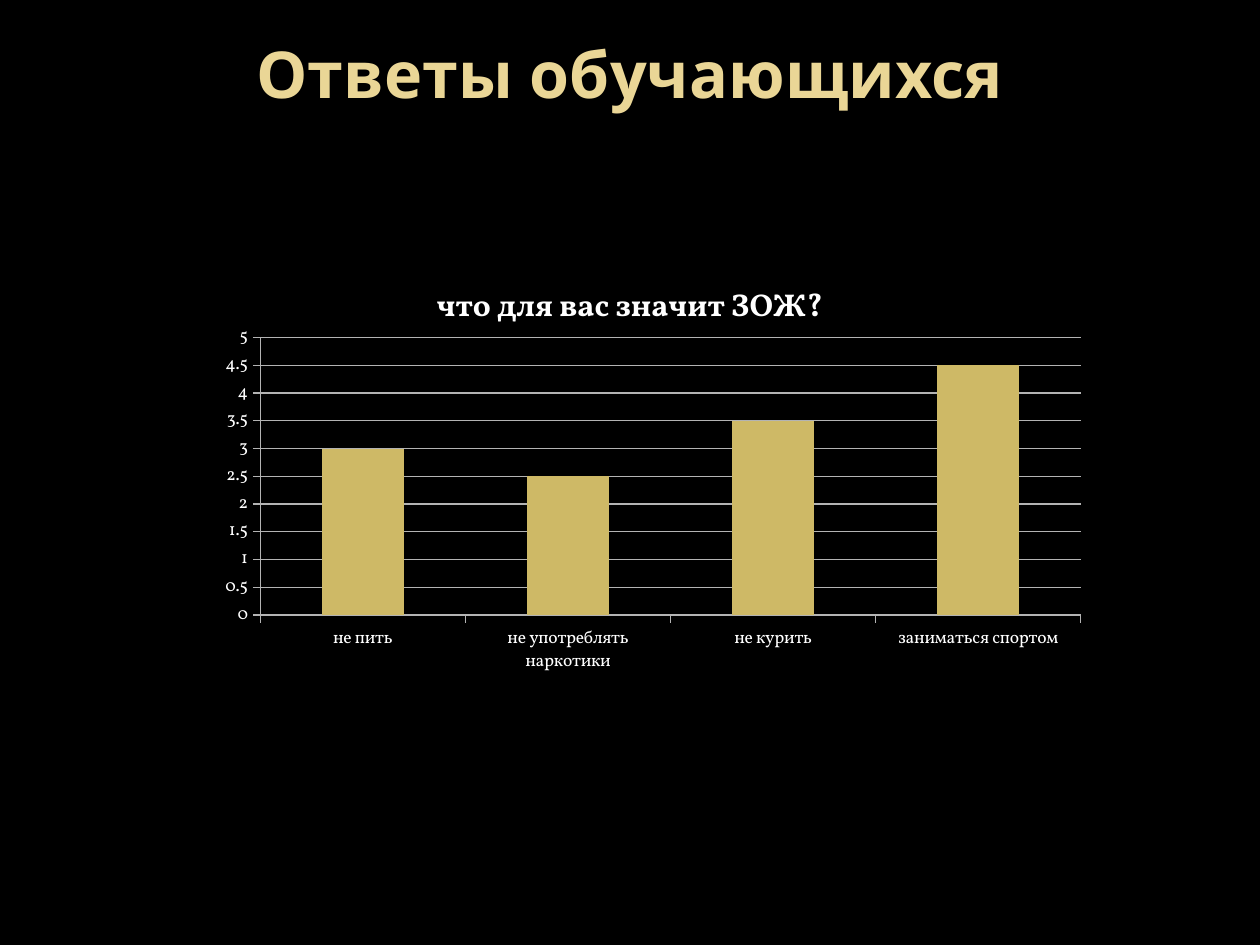
from lxml import etree
from pptx import Presentation
from pptx.chart import data
from pptx.dml.color import RGBColor
from pptx.enum import chart as ch, text
from pptx.oxml import ns
from pptx.util import Cm, Pt

BLACK = RGBColor(0x00, 0x00, 0x00)
WHITE = RGBColor(0xFF, 0xFF, 0xFF)
CREAM = RGBColor(0xEA, 0xD6, 0x96)
GOLD = RGBColor(0xCE, 0xB9, 0x66)
GREY = RGBColor(0xB3, 0xB3, 0xB3)


def set_font(font, color, **values):
    for name, value in values.items():
        setattr(font, name, value)
    font.color.rgb = color


prs = Presentation()
prs.slide_width, prs.slide_height = Cm(25.4), Cm(19.05)
s = prs.slides.add_slide(prs.slide_layouts[5])
s.background.fill.solid()
s.background.fill.fore_color.rgb = BLACK

# Title
sp = s.shapes.title
sp.left, sp.top, sp.width, sp.height = Cm(1.27), Cm(0.69), Cm(22.86), Cm(3.18)
tf = sp.text_frame
frame_format = {
    "word_wrap": True,
    "auto_size": text.MSO_AUTO_SIZE.NONE,
    "vertical_anchor": text.MSO_ANCHOR.TOP,
    "margin_top": 0,
}
for name, value in frame_format.items():
    setattr(tf, name, value)
p = tf.paragraphs[0]
p.alignment = text.PP_ALIGN.CENTER
r = p.add_run()
r.text = "Ответы обучающихся"
set_font(r.font, CREAM, name="Noto Sans", size=Pt(36.9), bold=True)

# Chart
answers = data.CategoryChartData()
answers.categories = ["не пить", "не употреблять наркотики", "не курить", "заниматься спортом"]
answers.add_series("Series 1", [3, 2.5, 3.5, 4.5])
chart = s.shapes.add_chart(
    ch.XL_CHART_TYPE.COLUMN_CLUSTERED, Cm(3.61), Cm(5.28), Cm(18.19), Cm(8.48), answers
).chart
chart.has_legend = False
set_font(chart.font, WHITE, name="Vollkorn", size=Pt(10))

chart.has_title = True
p = chart.chart_title.text_frame.paragraphs[0]
r = p.add_run()
r.text = "что для вас значит ЗОЖ?"
set_font(r.font, WHITE, name="Vollkorn", size=Pt(18), bold=True)
chart.chart_title.include_in_layout = False

plot = chart.plots[0]
plot.gap_width = 150
plot.vary_by_categories = False
fill = plot.series[0].format.fill
fill.solid()
fill.fore_color.rgb = GOLD

val_axis = chart.value_axis
axis_format = {"minimum_scale": 0, "maximum_scale": 5, "major_unit": 0.5, "has_major_gridlines": True}
for name, value in axis_format.items():
    setattr(val_axis, name, value)
for axis in (chart.category_axis, val_axis):
    axis.major_tick_mark = ch.XL_TICK_MARK.OUTSIDE
    axis.minor_tick_mark = ch.XL_TICK_MARK.NONE
    axis.tick_labels.number_format = "General"
    axis.tick_labels.number_format_is_linked = False
for line in (chart.category_axis.format.line, val_axis.format.line, val_axis.major_gridlines.format.line):
    line.color.rgb = GREY
    line.width = Pt(0.75)

# Inner plot area, as fractions of the chart
plot_area = chart.plots[0]._element.getparent()
for old in plot_area.findall(ns.qn("c:layout")):
    plot_area.remove(old)
layout = etree.Element(ns.qn("c:layout"))
manual = etree.SubElement(layout, ns.qn("c:manualLayout"))
for tag, value in {
    "layoutTarget": "inner", "xMode": "edge", "yMode": "edge",
    "x": 0.09, "y": 0.18, "w": 0.91, "h": 0.66,
}.items():
    etree.SubElement(manual, ns.qn(f"c:{tag}")).set("val", str(value))
plot_area.insert(0, layout)

prs.save("out.pptx")
